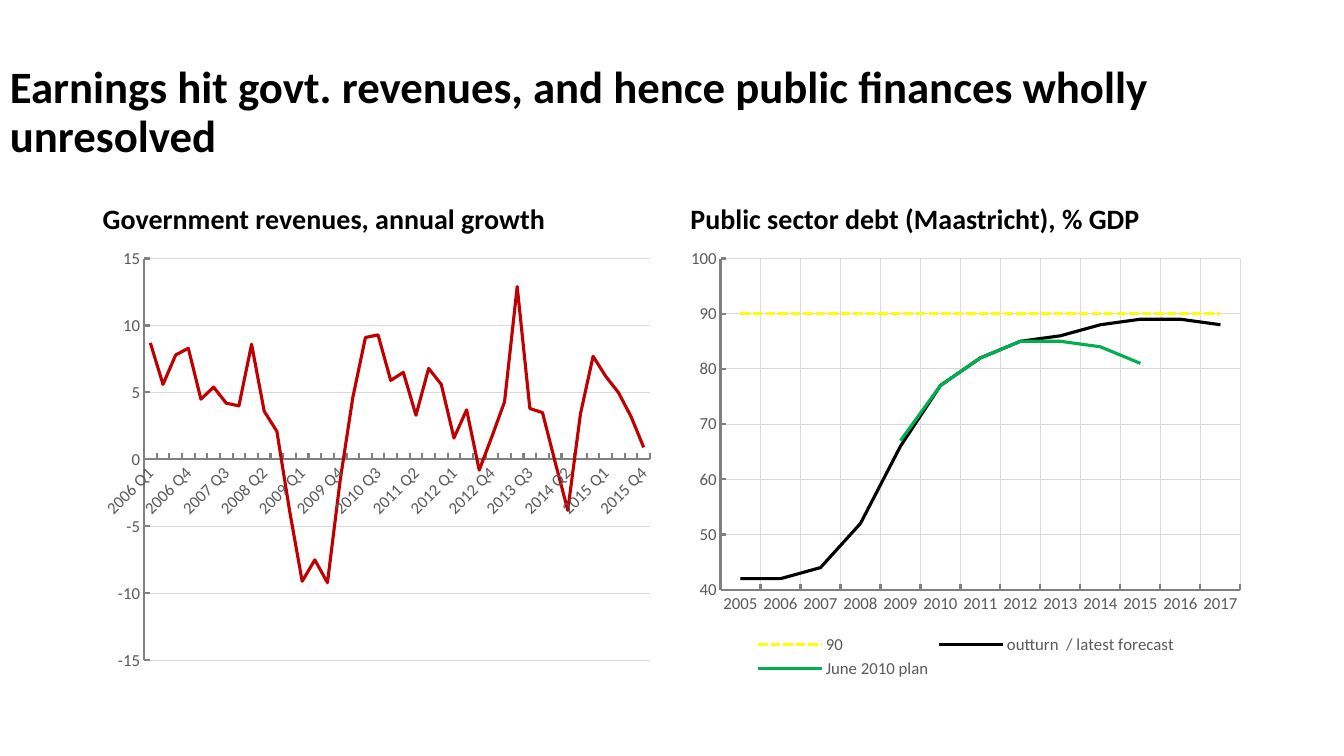
from lxml import etree
from pptx import Presentation
from pptx.chart.data import CategoryChartData
from pptx.dml.color import RGBColor
from pptx.enum.chart import XL_CHART_TYPE as CT, XL_LEGEND_POSITION as LP
from pptx.enum.chart import XL_MARKER_STYLE as Marker, XL_TICK_MARK as Tick
from pptx.enum.dml import MSO_LINE as Dash
from pptx.enum.text import MSO_ANCHOR as Anchor
from pptx.oxml import parse_xml
from pptx.oxml.ns import nsdecls, qn
from pptx.util import Cm, Pt

BLACK = RGBColor(0x00, 0x00, 0x00)
GREY_TEXT = RGBColor(0x59, 0x59, 0x59)
GREY_AXIS = RGBColor(0x80, 0x80, 0x80)
GREY_GRID = RGBColor(0xD9, 0xD9, 0xD9)
RED = RGBColor(0xC0, 0x00, 0x00)
YELLOW = RGBColor(0xFF, 0xFF, 0x00)
GREEN = RGBColor(0x00, 0xB0, 0x50)
FONT = "Calibri"


def add_heading(s, text, box, size, anchor):
    tf = s.shapes.add_textbox(*[Cm(v) for v in box]).text_frame
    tf.word_wrap = True
    tf.vertical_anchor = anchor
    p = tf.paragraphs[0]
    p.line_spacing = 0.9
    r = p.add_run()
    r.text = text
    r.font.name, r.font.size, r.font.bold = FONT, Pt(size), True
    r.font.color.rgb = BLACK


def add_line_chart(s, box, categories, series, plot):
    """Draw series given as (name, values, colour, dash); plot is x, y, w, h as shares of the chart."""
    data = CategoryChartData()
    data.categories = categories
    for name, values, _, _ in series:
        data.add_series(name, values)
    chart = s.shapes.add_chart(CT.LINE, *[Cm(v) for v in box], data).chart
    chart.has_title = chart.has_legend = False
    chart.font.name, chart.font.size = FONT, Pt(12)
    chart.font.color.rgb = GREY_TEXT

    for line, (_, _, colour, dash) in zip(chart.plots[0].series, series):
        line.smooth = False
        line.marker.style = Marker.NONE
        line.format.line.width = Pt(2.25)
        line.format.line.color.rgb = colour
        if dash:
            line.format.line.dash_style = dash

    for axis in (chart.category_axis, chart.value_axis):
        axis.major_tick_mark, axis.minor_tick_mark = Tick.INSIDE, Tick.NONE
        axis.format.line.width = Pt(1.5)
        axis.format.line.color.rgb = GREY_AXIS
        axis.tick_labels.font.size = Pt(12)
        axis.has_major_gridlines = True
        grid = axis.major_gridlines.format.line
        grid.width = Pt(0.75)
        grid.color.rgb = GREY_GRID

    area = chart._chartSpace.chart.plotArea
    for old in area.findall(qn("c:layout")):
        area.remove(old)
    layout = parse_xml(f"<c:layout {nsdecls('c')}><c:manualLayout/></c:layout>")
    settings = [("layoutTarget", "inner"), ("xMode", "edge"), ("yMode", "edge")]
    for tag, val in settings + list(zip("xywh", plot)):
        etree.SubElement(layout[0], qn(f"c:{tag}")).set("val", str(val))
    area.insert(0, layout)
    return chart


prs = Presentation()
prs.slide_width, prs.slide_height = Cm(33.87), Cm(19.05)
s = prs.slides.add_slide(prs.slide_layouts[6])

add_heading(s, "Earnings hit govt. revenues, and hence public finances wholly unresolved",
            (0, 1.02, 33.55, 3.68), 32, Anchor.MIDDLE)

LEFT_X, LEFT_W = 2.34, 14.33
RIGHT_X, RIGHT_W = 17.15, 14.4
HEADING_Y, HEADING_H = 4.67, 1.4
CHART_Y, CHART_H = 6.07, 11.13

# Government revenues
add_heading(s, "Government revenues, annual growth",
            (LEFT_X, HEADING_Y, LEFT_W, HEADING_H), 20, Anchor.BOTTOM)
quarters = [f"{year} Q{q}" for year in range(2006, 2016) for q in range(1, 5)]
growth = [8.7, 5.6, 7.8, 8.3, 4.5, 5.4, 4.2, 4, 8.6, 3.6, 2.1, -3.8, -9.1, -7.5,
          -9.2, -1.6, 4.6, 9.1, 9.3, 5.9, 6.5, 3.3, 6.8, 5.6, 1.6, 3.7, -0.8, 1.7,
          4.3, 12.9, 3.8, 3.5, -0.2, -3.8, 3.4, 7.7, 6.2, 5, 3.2, 0.9]
revenues = add_line_chart(s, (LEFT_X, CHART_Y, LEFT_W, CHART_H), quarters,
                          [("Series 1", growth, RED, None)], (0.09, 0.04, 0.89, 0.91))
revenues.category_axis.has_major_gridlines = False
revenues.value_axis.minimum_scale, revenues.value_axis.maximum_scale = -15, 15
revenues.value_axis.major_unit = 5
labels = revenues.category_axis._element.find(qn("c:txPr"))
labels.find(qn("a:bodyPr")).set("rot", "-2700000")

# Public sector debt
add_heading(s, "Public sector debt (Maastricht), % GDP",
            (RIGHT_X, HEADING_Y, RIGHT_W, HEADING_H), 20, Anchor.BOTTOM)
years = [str(year) for year in range(2005, 2018)]
outturn = [42, 42, 44, 52, 66, 77, 82, 85, 86, 88, 89, 89, 88]
plan = [None] * 4 + [67, 77, 82, 85, 85, 84, 81] + [None] * 2
debt = add_line_chart(s, (RIGHT_X, CHART_Y, RIGHT_W, CHART_H), years,
                      [("90", [90] * len(years), YELLOW, Dash.SQUARE_DOT),
                       ("outturn  / latest forecast", outturn, BLACK, None),
                       ("June 2010 plan", plan, GREEN, None)],
                      (0.07, 0.04, 0.91, 0.75))
debt.value_axis.minimum_scale, debt.value_axis.maximum_scale = 40, 100
debt.value_axis.major_unit = 10
debt.has_legend = True
debt.legend.position = LP.BOTTOM
debt.legend.include_in_layout = False
debt.legend.font.name, debt.legend.font.size = FONT, Pt(12)
debt.legend.font.color.rgb = GREY_TEXT

prs.save("out.pptx")
